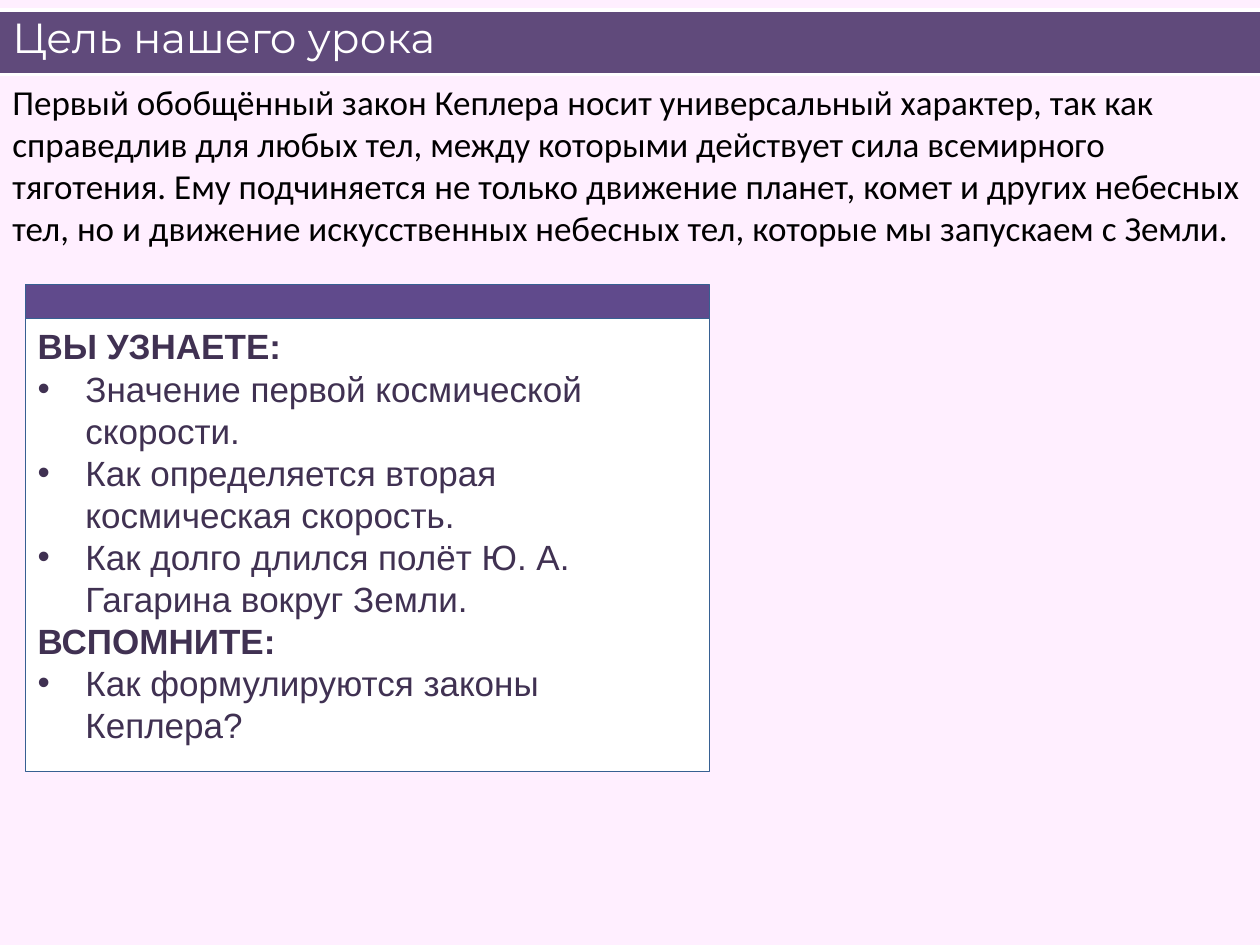
from lxml.etree import SubElement
from pptx import Presentation
from pptx.dml.color import RGBColor
from pptx.enum.shapes import MSO_CONNECTOR, MSO_SHAPE
from pptx.enum.text import MSO_ANCHOR, PP_ALIGN
from pptx.oxml.ns import qn
from pptx.util import Inches, Pt

BACKGROUND = RGBColor(0xFF, 0xEF, 0xFF)
BANNER = RGBColor(0x60, 0x4A, 0x7B)
CARD_HEAD = RGBColor(0x60, 0x4A, 0x8C)
CARD_LINE = RGBColor(0x37, 0x60, 0x92)
CARD_TEXT = RGBColor(0x40, 0x31, 0x52)
WHITE = RGBColor(0xFF, 0xFF, 0xFF)
BLACK = RGBColor(0, 0, 0)

prs = Presentation()
prs.slide_width, prs.slide_height = Inches(10), Inches(7.5)
s = prs.slides.add_slide(prs.slide_layouts[6])
s.background.fill.solid()
s.background.fill.fore_color.rgb = BACKGROUND


def add_rect(left, top, width, height, fill, line=None):
    sp = s.shapes.add_shape(MSO_SHAPE.RECTANGLE, *map(Inches, (left, top, width, height)))
    sp.shadow.inherit = False
    sp.fill.solid()
    sp.fill.fore_color.rgb = fill
    if line is None:
        sp.line.fill.background()
    else:
        sp.line.color.rgb = line
        sp.line.width = Pt(0.5)
    return sp


def add_text(tf, text, font, size, color, bold=False, bullet=False, spacing=None):
    """Write one paragraph, using the frame's first one while it is empty."""
    tf.word_wrap = True
    p = tf.paragraphs[0] if not tf.text else tf.add_paragraph()
    p.alignment = PP_ALIGN.LEFT
    if spacing:
        p.line_spacing = Pt(spacing)
    if bullet:
        pPr = p._p.get_or_add_pPr()
        pPr.set("marL", str(Inches(0.38)))
        pPr.set("indent", str(-Inches(0.38)))
        SubElement(pPr, qn("a:buFont")).set("typeface", "Arial")
        SubElement(pPr, qn("a:buChar")).set("char", "•")
    r = p.add_run()
    r.text = text
    r.font.name, r.font.size, r.font.bold = font, Pt(size), bold
    r.font.color.rgb = color


# Title banner between two white rules
banner_top, banner_bottom = 0.08, 0.59
add_rect(0, banner_top, 10, banner_bottom - banner_top, BANNER)
for y in (banner_bottom, banner_top):
    rule = s.shapes.add_connector(MSO_CONNECTOR.STRAIGHT, 0, Inches(y), prs.slide_width, Inches(y))
    rule.line.color.rgb = WHITE
    rule.line.width = Pt(2)
    SubElement(rule._element.spPr, qn("a:effectLst"))

title = s.shapes.add_textbox(0, Inches(-0.04), prs.slide_width, Inches(0.67))
title.text_frame.vertical_anchor = MSO_ANCHOR.MIDDLE
add_text(title.text_frame, "Цель нашего урока", "Montserrat", 24, WHITE)

intro = s.shapes.add_textbox(0, Inches(banner_bottom), prs.slide_width, Inches(1.45))
add_text(
    intro.text_frame,
    "Первый обобщённый закон Кеплера носит универсальный характер, так как "
    "справедлив для любых тел, между которыми действует сила всемирного "
    "тяготения. Ему подчиняется не только движение планет, комет и других небесных "
    "тел, но и движение искусственных небесных тел, которые мы запускаем с Земли.",
    "Calibri", 20, BLACK)

# Card with the lesson's goals
card_left, card_top, card_width, head_height = 0.2, 2.26, 5.43, 0.27
add_rect(card_left, card_top, card_width, head_height, CARD_HEAD, CARD_LINE)
card = add_rect(card_left, card_top + head_height, card_width, 3.59, WHITE, CARD_LINE)
card.text_frame.vertical_anchor = MSO_ANCHOR.TOP

goals = {
    "ВЫ УЗНАЕТЕ:": [
        "Значение первой космической скорости.",
        "Как определяется вторая космическая скорость.",
        "Как долго длился полёт Ю. А. Гагарина вокруг Земли.",
    ],
    "ВСПОМНИТЕ:": ["Как формулируются законы Кеплера?"],
}
for heading, items in goals.items():
    add_text(card.text_frame, heading, "Arial", 20, CARD_TEXT, bold=True, spacing=24)
    for item in items:
        add_text(card.text_frame, item, "Arial", 20, CARD_TEXT, bullet=True, spacing=24)

prs.save("out.pptx")
